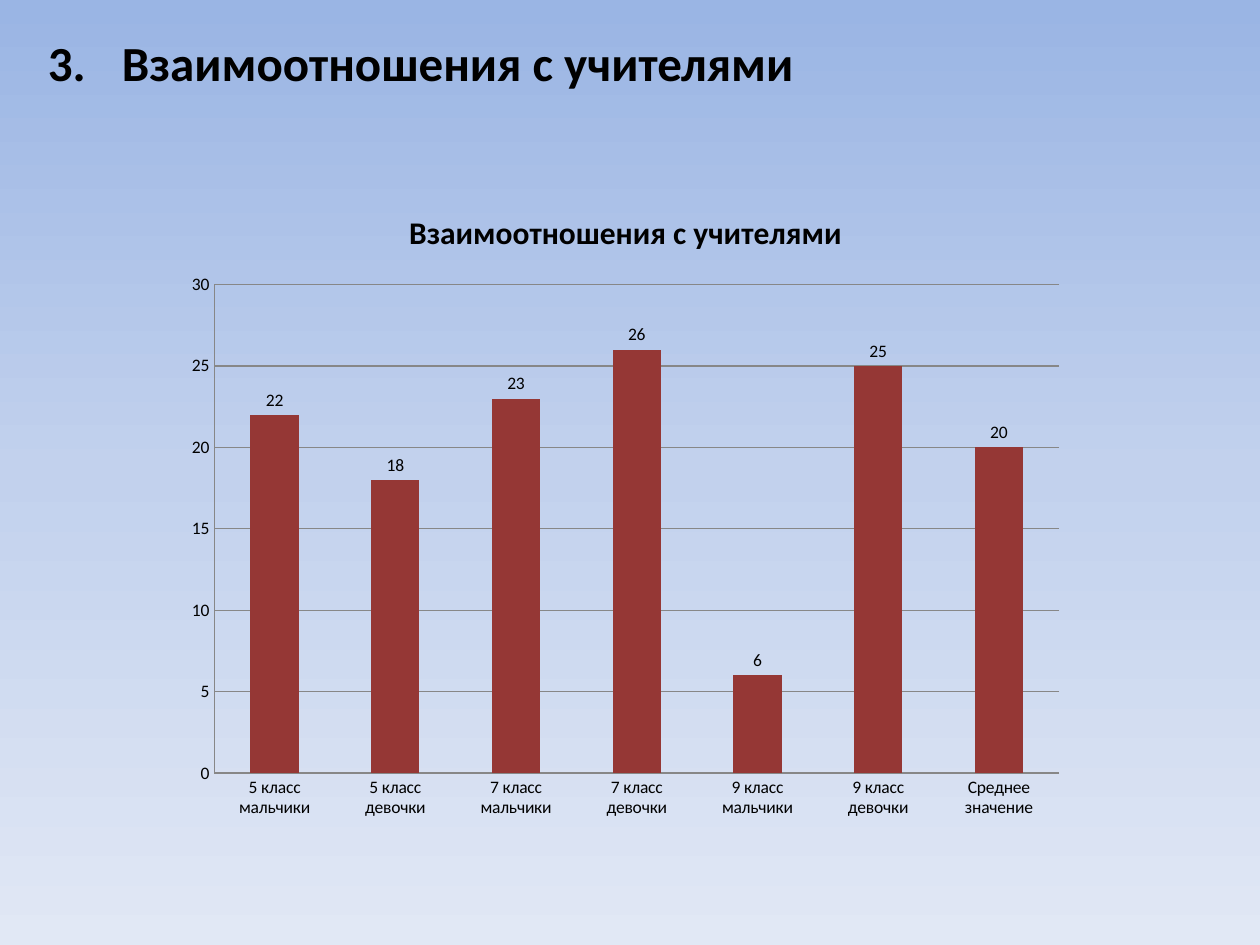
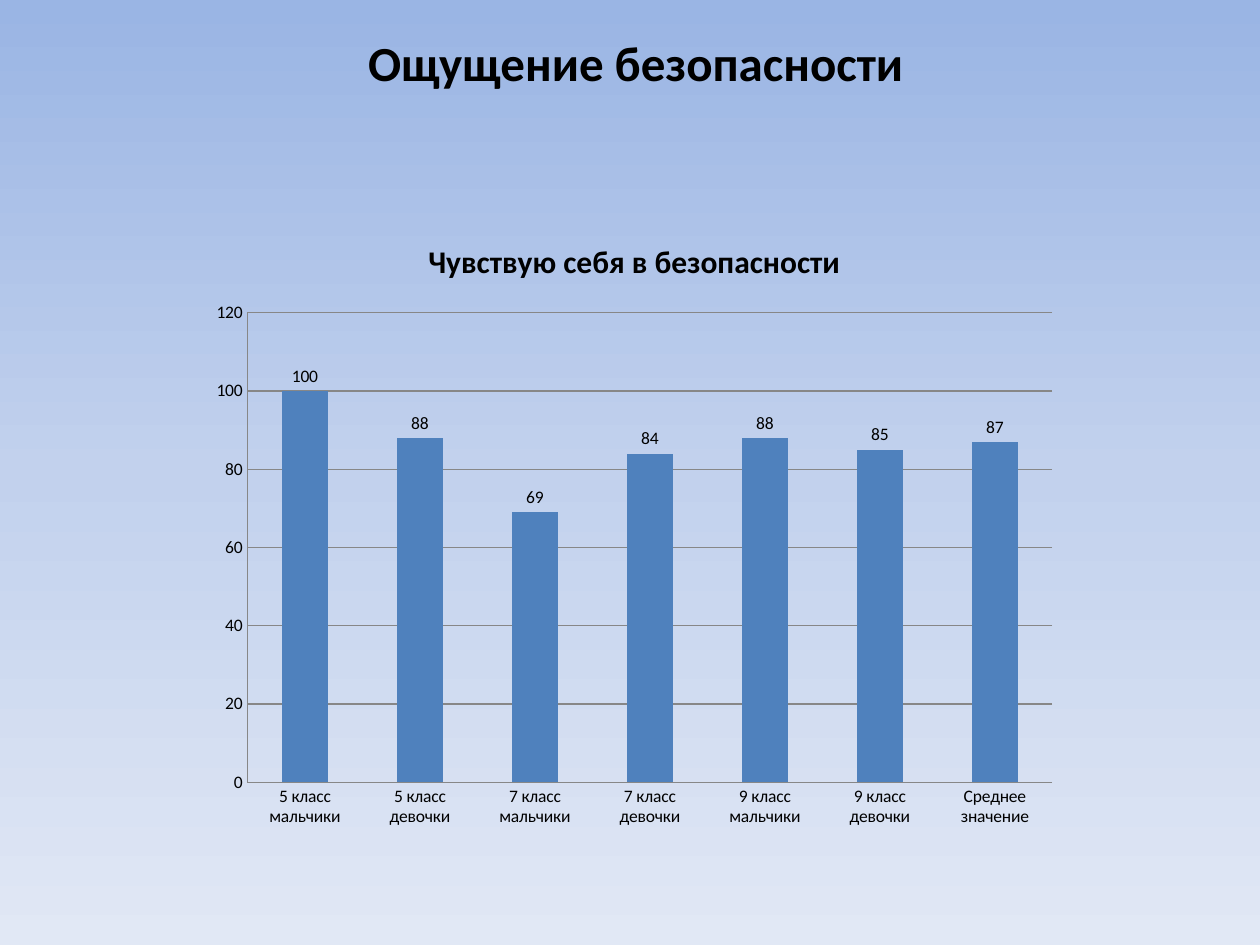
from copy import deepcopy
from dataclasses import dataclass

from pptx import Presentation
from pptx.chart.data import CategoryChartData
from pptx.dml.color import RGBColor
from pptx.enum.chart import XL_CHART_TYPE, XL_LABEL_POSITION, XL_TICK_MARK
from pptx.enum.text import MSO_ANCHOR, MSO_AUTO_SIZE, PP_ALIGN
from pptx.oxml.ns import qn
from pptx.util import Inches, Pt

GROUPS = [
    "5 класс мальчики",
    "5 класс девочки",
    "7 класс мальчики",
    "7 класс девочки",
    "9 класс мальчики",
    "9 класс девочки",
    "Среднее значение",
]

TOPICS = [
    {
        "heading": "3.\t Взаимоотношения с учителями",
        "align": PP_ALIGN.LEFT,
        "chart_title": "Взаимоотношения с учителями",
        "scores": [22, 18, 23, 26, 6, 25, 20],
        "bar_color": "953735",
        "top_score": 30,
        "step": 5,
        "area": (1.38, 1.47, 7.17, 5.12),
    },
    {
        "heading": "Ощущение безопасности",
        "align": PP_ALIGN.CENTER,
        "chart_title": "Чувствую себя в безопасности",
        "scores": [100, 88, 69, 84, 88, 85, 87],
        "bar_color": "4F81BD",
        "top_score": 120,
        "step": 20,
        "area": (1.58, 1.7, 6.91, 4.96),
    },
]

TITLE_AREA = (0.28, 0.21, 9.53, 0.57)


@dataclass(frozen=True)
class Theme:
    font: str = "Calibri"
    ink: str = "000000"
    grid: str = "878787"
    sky: tuple = ("9AB5E4", "C2D1ED", "E1E8F5")
    heading_size: int = 28
    chart_title_size: int = 18
    chart_size: int = 10
    grid_width: float = 0.75


THEME = Theme()


def color(code):
    return RGBColor.from_string(code)


def style(font, size, bold=False):
    font.name = THEME.font
    font.size = Pt(size)
    font.bold = bold
    font.color.rgb = color(THEME.ink)


def paint_background(master):
    fill = master.background.fill
    fill.gradient()
    fill.gradient_angle = 270
    stop_list = master.element.find(".//" + qn("a:gsLst"))
    stop_list.insert(1, deepcopy(stop_list[0]))
    stops = list(fill.gradient_stops)
    for index, (stop, code) in enumerate(zip(stops, THEME.sky)):
        stop.position = index / (len(stops) - 1)
        stop.color.rgb = color(code)


def add_heading(page, text, align):
    box = page.shapes.title
    box.left, box.top, box.width, box.height = map(Inches, TITLE_AREA)
    frame = box.text_frame
    frame.word_wrap = True
    frame.auto_size = MSO_AUTO_SIZE.SHAPE_TO_FIT_TEXT
    frame.vertical_anchor = MSO_ANCHOR.TOP
    para = frame.paragraphs[0]
    para.alignment = align
    span = para.add_run()
    span.text = text
    style(span.font, THEME.heading_size, bold=True)


def style_line(line):
    line.color.rgb = color(THEME.grid)
    line.width = Pt(THEME.grid_width)


def style_axes(chart, top_score, step):
    for axis in (chart.category_axis, chart.value_axis):
        axis.major_tick_mark = XL_TICK_MARK.NONE
        axis.minor_tick_mark = XL_TICK_MARK.NONE
        style_line(axis.format.line)
    scale = chart.value_axis
    scale.minimum_scale = 0
    scale.maximum_scale = top_score
    scale.major_unit = step
    scale.has_major_gridlines = True
    style_line(scale.major_gridlines.format.line)


def add_score_chart(page, topic):
    data = CategoryChartData()
    data.categories = GROUPS
    data.add_series("Series 1", topic["scores"])
    chart = page.shapes.add_chart(
        XL_CHART_TYPE.COLUMN_CLUSTERED, *map(Inches, topic["area"]), data
    ).chart
    style(chart.font, THEME.chart_size)
    chart.has_legend = False

    chart.has_title = True
    chart.chart_title.include_in_layout = False
    span = chart.chart_title.text_frame.paragraphs[0].add_run()
    span.text = topic["chart_title"]
    style(span.font, THEME.chart_title_size, bold=True)

    style_axes(chart, topic["top_score"], topic["step"])

    plot = chart.plots[0]
    plot.gap_width = 150
    plot.vary_by_categories = False
    bars = plot.series[0]
    bars.format.fill.solid()
    bars.format.fill.fore_color.rgb = color(topic["bar_color"])
    labels = bars.data_labels
    labels.show_value = True
    labels.position = XL_LABEL_POSITION.OUTSIDE_END
    style(labels.font, THEME.chart_size)


def main():
    deck = Presentation()
    deck.slide_width, deck.slide_height = Inches(10), Inches(7.5)
    paint_background(deck.slide_master)
    title_only = deck.slide_layouts.get_by_name("Title Only")
    for topic in TOPICS:
        page = deck.slides.add_slide(title_only)
        add_heading(page, topic["heading"], topic["align"])
        add_score_chart(page, topic)
    deck.save("out.pptx")


if __name__ == "__main__":
    main()
